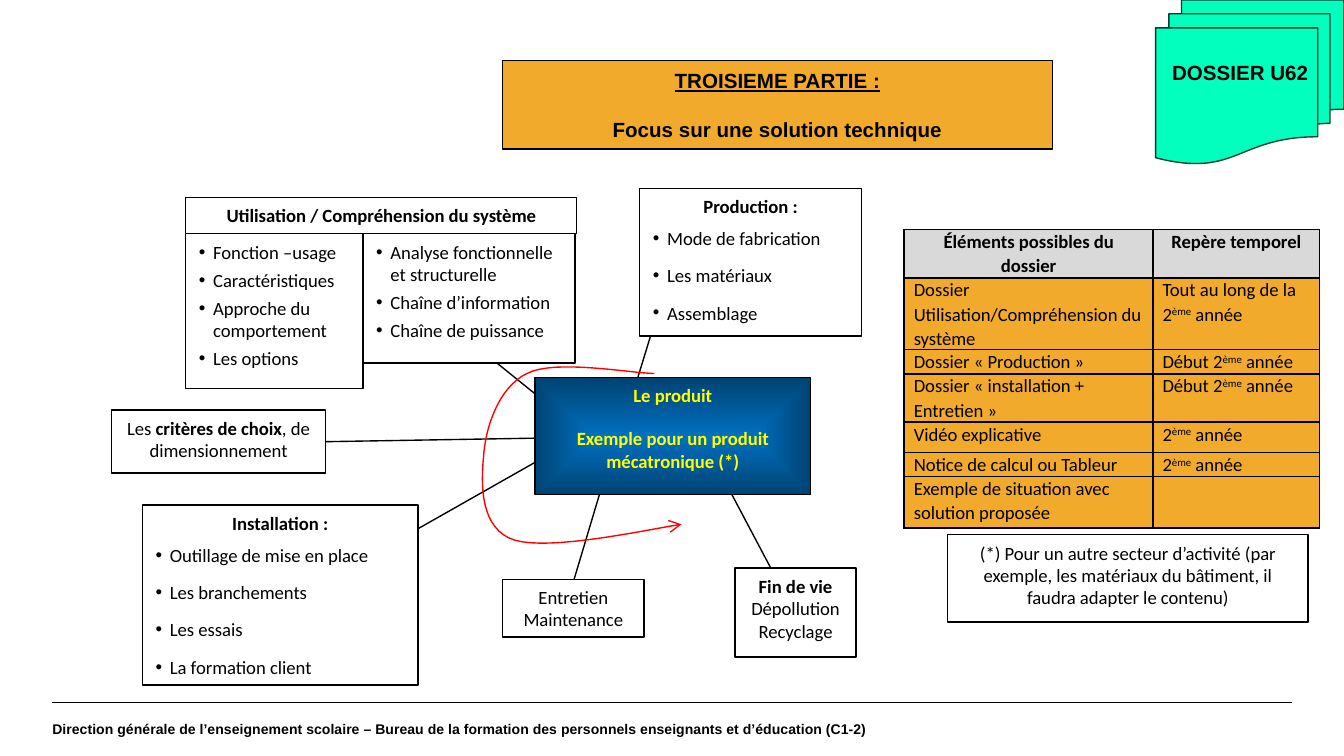
from lxml import etree
from pptx import Presentation
from pptx import util as u
from pptx.dml import color as c
from pptx.enum import shapes as s, text as t
from pptx.oxml import ns


class Theme:
    black = c.RGBColor.from_string("000000")
    white = c.RGBColor.from_string("FFFFFF")
    gold = c.RGBColor.from_string("F1AA2B")
    grey = c.RGBColor.from_string("D9D9D9")
    mint = c.RGBColor.from_string("02FFBD")
    pine = c.RGBColor.from_string("004130")
    blue = c.RGBColor.from_string("0070C0")
    navy = c.RGBColor.from_string("004373")
    lemon = c.RGBColor.from_string("FFFF00")
    red = c.RGBColor.from_string("FF0000")
    body, head = "Calibri", "Arial"
    small, text, title = 7.5, 10, 11
    thin, rule, grid = 0.75, 0.8, 1


def write(frame, paras, face=Theme.body, size=Theme.text, hue=Theme.black, lead=None):
    frame.word_wrap = True
    for i, (kind, after, *runs) in enumerate(paras):
        para = frame.paragraphs[0] if i == 0 else frame.add_paragraph()
        para.alignment = t.PP_ALIGN.CENTER if kind == "c" else t.PP_ALIGN.LEFT
        para.space_after = u.Pt(after)
        if lead:
            para.line_spacing = lead
        if kind == "*":
            props = para._p.get_or_add_pPr()
            props.set("marL", str(u.Cm(0.27)))
            props.set("indent", str(u.Cm(-0.27)))
            etree.SubElement(props, ns.qn("a:buFont")).set("typeface", Theme.head)
            etree.SubElement(props, ns.qn("a:buChar")).set("char", "•")
        for words, style in runs:
            run = para.add_run()
            run.text = words
            run.font.name, run.font.size = face, u.Pt(size)
            run.font.color.rgb = hue
            run.font.bold = "b" in style
            run.font.underline = "u" in style
            if "^" in style:
                run._r.get_or_add_rPr().set("baseline", "30000")


def block(area, fill=Theme.white, line=Theme.black, form=s.MSO_SHAPE.RECTANGLE):
    shape = slide.shapes.add_shape(form, *map(u.Cm, area))
    shape.shadow.inherit = False
    shape.fill.solid()
    shape.fill.fore_color.rgb = fill
    shape.line.color.rgb = line
    shape.line.width = u.Pt(Theme.thin)
    shape.text_frame.vertical_anchor = t.MSO_ANCHOR.TOP
    return shape


deck = Presentation()
deck.slide_width, deck.slide_height = u.Cm(25.4), u.Cm(14.29)
slide = deck.slides.add_slide(deck.slide_layouts[6])

links = [
    (0.99, 13.28, 24.41, 13.28, Theme.rule),
    (13.51, 8.74, 14.61, 10.82, Theme.thin),
    (11.79, 8, 12.42, 5.94, Theme.thin),
    (10.24, 8.28, 5.49, 8.36, Theme.thin),
    (11.68, 7.85, 7.29, 10.34, Theme.thin),
    (10.8, 8, 8.51, 6.15, Theme.thin),
    (11.51, 8.74, 10.85, 10.95, Theme.thin),
]
for *ends, width in links:
    link = slide.shapes.add_connector(s.MSO_CONNECTOR.STRAIGHT, *map(u.Cm, ends))
    link.line.color.rgb = Theme.black
    link.line.width = u.Pt(width)
    etree.SubElement(link._element.spPr, ns.qn("a:effectLst"))

foot = slide.shapes.add_textbox(*map(u.Cm, (0.99, 13.28, 23.7, 0.99))).text_frame
foot.margin_left = foot.margin_right = foot.margin_top = foot.margin_bottom = 0
foot.vertical_anchor = t.MSO_ANCHOR.MIDDLE
write(foot, [("l", 0, ("Direction générale de l’enseignement scolaire – Bureau de la formation "
                       "des personnels enseignants et d’éducation (C1-2)", "b"))],
      Theme.head, Theme.small)

title = block((9.5, 1.14, 10.39, 1.68), Theme.gold).text_frame
title.vertical_anchor = t.MSO_ANCHOR.MIDDLE
write(title, [("c", 12.6, ("TROISIEME PARTIE :", "bu")),
              ("c", 0, ("Focus sur une solution technique", "b"))],
      Theme.head, Theme.title)

block((21.84, 0, 3.56, 3.1), Theme.mint, Theme.pine, s.MSO_SHAPE.FLOWCHART_MULTIDOCUMENT)
label = slide.shapes.add_textbox(*map(u.Cm, (21.84, 0.99, 3.2, 0.74))).text_frame
label.vertical_anchor = t.MSO_ANCHOR.MIDDLE
write(label, [("c", 0, ("DOSSIER U62", "b"))], Theme.head, Theme.title)

year = [("ème", "^"), (" année", "")]
rows = [
    (0.91, [("Éléments possibles du dossier", "b")], [("Repère temporel", "b")]),
    (1.36, [("Dossier Utilisation/Compréhension du système", "")],
     [("Tout au long de la 2", ""), *year]),
    (0.45, [("Dossier « Production »", "")], [("Début 2", ""), *year]),
    (0.91, [("Dossier « installation + Entretien »", "")], [("Début 2", ""), *year]),
    (0.58, [("Vidéo explicative", "")], [("2", ""), *year]),
    (0.45, [("Notice de calcul ou Tableur", "")], [("2", ""), *year]),
    (0.97, [("Exemple de situation avec solution proposée", "")], []),
]
high = sum(row[0] for row in rows)
table = slide.shapes.add_table(len(rows), 2, *map(u.Cm, (17.09, 4.34, 7.85, high))).table
table.first_row = table.horz_banding = False
for col, width in zip(table.columns, (4.7, 3.15)):
    col.width = u.Cm(width)
for i, (tall, *cells) in enumerate(rows):
    table.rows[i].height = u.Cm(tall)
    for j, runs in enumerate(cells):
        cell = table.cell(i, j)
        cell.margin_left = cell.margin_right = u.Cm(0.18)
        cell.margin_top = cell.margin_bottom = 0
        props = cell._tc.get_or_add_tcPr()
        for side in ("a:lnL", "a:lnR", "a:lnT", "a:lnB"):
            edge = etree.SubElement(props, ns.qn(side), w=str(u.Pt(Theme.grid)))
            ink = etree.SubElement(edge, ns.qn("a:solidFill"))
            etree.SubElement(ink, ns.qn("a:srgbClr"), val=str(Theme.black))
        cell.fill.solid()
        cell.fill.fore_color.rgb = Theme.gold if i else Theme.grey
        write(cell.text_frame, [("l" if i else "c", 0, *runs)], lead=1.07)
        if not runs:
            cell.text_frame.paragraphs[0].font.size = u.Pt(Theme.text)

boxes = [
    ((2.69, 9.55, 5.21, 3.4), [
        ("c", 5, ("Installation :", "b")),
        ("*", 8, ("Outillage de mise en place", "")),
        ("*", 8, ("Les branchements", "")),
        ("*", 8, ("Les essais", "")),
        ("*", 0, ("La formation client", ""))]),
    ((2.11, 7.75, 4.04, 1.19), [
        ("c", 0, ("Les ", ""), ("critères de choix", "b"), (", de dimensionnement", ""))]),
    ((12.09, 3.56, 4.19, 2.79), [
        ("c", 5, ("Production :", "b")),
        ("*", 8, ("Mode de fabrication", "")),
        ("*", 8, ("Les matériaux", "")),
        ("*", 0, ("Assemblage", ""))]),
    ((9.5, 10.95, 2.67, 1.09), [
        ("c", 0, ("Entretien", "")),
        ("c", 0, ("Maintenance", ""))]),
    ((3.51, 4.42, 3.35, 2.92), [
        ("*", 3, ("Fonction –usage", "")),
        ("*", 3, ("Caractéristiques", "")),
        ("*", 3, ("Approche du comportement", "")),
        ("*", 0, ("Les options", ""))]),
    ((13.89, 10.74, 2.29, 1.68), [
        ("c", 0, ("Fin de vie", "b")),
        ("c", 0, ("Dépollution", "")),
        ("c", 0, ("Recyclage", ""))]),
    ((6.86, 4.42, 4.01, 2.44), [
        ("*", 3, ("Analyse fonctionnelle et structurelle", "")),
        ("*", 3, ("Chaîne d’information", "")),
        ("*", 0, ("Chaîne de puissance", ""))]),
    ((3.51, 3.73, 7.39, 0.69), [
        ("c", 0, ("Utilisation / Compréhension du système", "b"))]),
    ((17.91, 10.11, 6.81, 1.65), [
        ("c", 0, ("(*) Pour un autre secteur d’activité (par exemple, les matériaux "
                  "du bâtiment, il faudra adapter le contenu)", ""))]),
]
for area, paras in boxes:
    write(block(area).text_frame, paras)

core = block((10.11, 7.14, 5.21, 2.21))
core.fill.gradient()
for stop, hue in zip(core.fill.gradient_stops, (Theme.blue, Theme.navy)):
    stop.color.rgb = hue
fade = core._element.spPr.find(ns.qn("a:gradFill"))
fade.remove(fade.find(ns.qn("a:lin")))
glow = etree.SubElement(fade, ns.qn("a:path"), {"path": "shape"})
etree.SubElement(glow, ns.qn("a:fillToRect"), {side: "50000" for side in "ltrb"})
write(core.text_frame, [("c", 11, ("Le produit", "b")),
                        ("c", 0, ("Exemple pour un produit mécatronique (*)", "b"))],
      hue=Theme.lemon)

knots = [(12.37, 7.06), (11.96, 7.06), (10.49, 6.78), (9.96, 7.06), (9.42, 7.32),
         (9.17, 8.1), (9.14, 8.64), (9.09, 9.14), (9.07, 10.01), (9.73, 10.21),
         (10.41, 10.41), (12.14, 10.03), (12.88, 9.91)]
steps = 16
dots = []
for i in range(0, len(knots) - 1, 3):
    for n in range(1, steps + 1):
        f = n / steps
        parts = ((1 - f) ** 3, 3 * f * (1 - f) ** 2, 3 * f * f * (1 - f), f ** 3)
        dots.append([u.Cm(sum(k * p[axis] for k, p in zip(parts, knots[i:i + 4])))
                     for axis in (0, 1)])
path = slide.shapes.build_freeform(*map(u.Cm, knots[0]))
path.add_line_segments(dots, close=False)
curve = path.convert_to_shape()
curve.shadow.inherit = False
curve.fill.background()
curve.line.color.rgb = Theme.red
curve.line.width = u.Pt(Theme.thin)
etree.SubElement(curve.line._get_or_add_ln(), ns.qn("a:tailEnd"), type="arrow")

deck.save("out.pptx")
